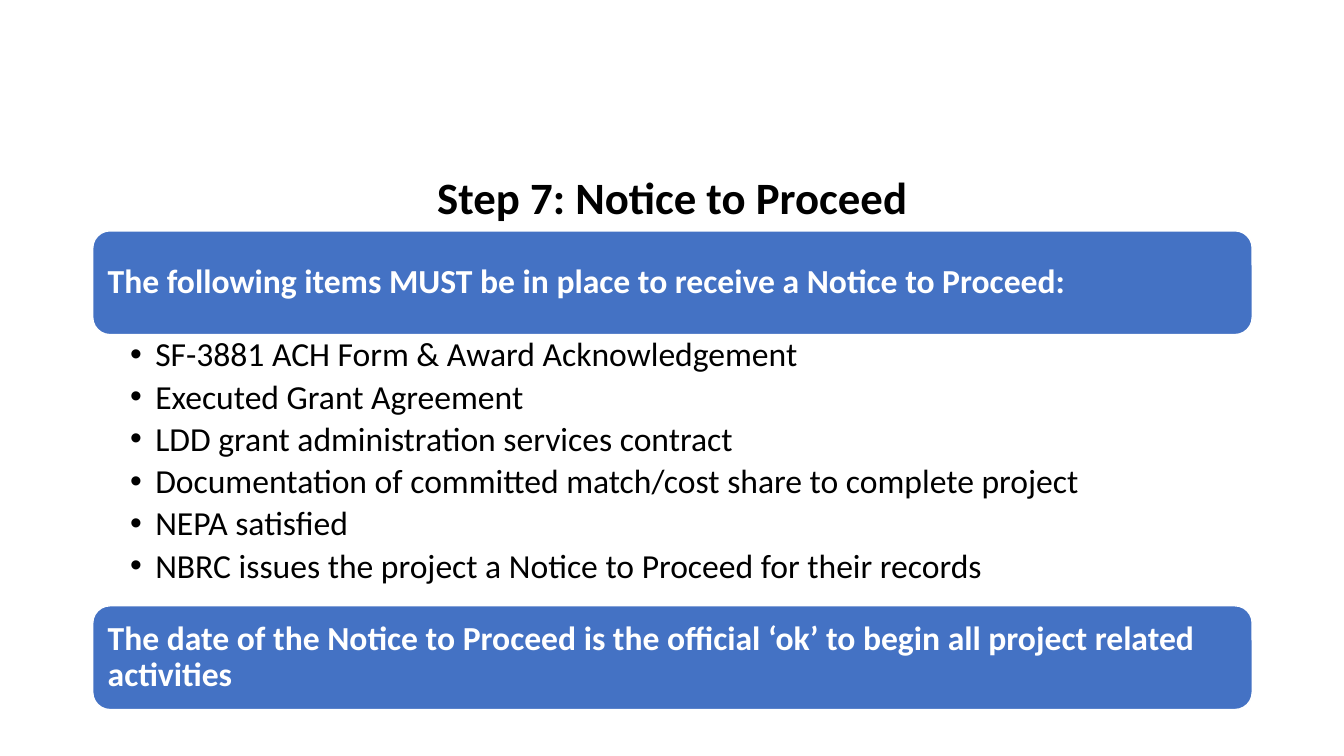
from lxml.etree import SubElement
from pptx import Presentation
from pptx.dml.color import RGBColor
from pptx.enum.shapes import MSO_SHAPE
from pptx.enum.text import MSO_ANCHOR, MSO_AUTO_SIZE, PP_ALIGN
from pptx.oxml.ns import qn
from pptx.util import Inches, Pt

COLORS = {"panel": "4472C4", "white": "FFFFFF", "black": "000000"}
LEFT, WIDTH = Inches(0.92), Inches(11.5)
PANEL_HEIGHT = Inches(1.03)
PANELS = [
    (2.29, "The following items MUST be in place to receive a Notice to Proceed:"),
    (6.01, "The date of the Notice to Proceed is the official ‘ok’ to begin all project related activities"),
]
REQUIREMENTS = [
    "SF-3881 ACH Form & Award Acknowledgement",
    "Executed Grant Agreement",
    "LDD grant administration services contract",
    "Documentation of committed match/cost share to complete project",
    "NEPA satisfied",
    "NBRC issues the project a Notice to Proceed for their records",
]


def style_paragraph(para, size, color, bold, align=PP_ALIGN.LEFT):
    para.alignment = align
    para.line_spacing = 0.9
    para.space_before = Pt(0)
    para.font.name = "Calibri"
    para.font.size = Pt(size)
    para.font.bold = bold
    para.font.color.rgb = RGBColor.from_string(COLORS[color])


def set_frame(frame, anchor, left, top, right, bottom):
    frame.word_wrap = True
    frame.auto_size = MSO_AUTO_SIZE.NONE
    frame.vertical_anchor = anchor
    frame.margin_left, frame.margin_top = Inches(left), Inches(top)
    frame.margin_right, frame.margin_bottom = Inches(right), Inches(bottom)


deck = Presentation()
deck.slide_width, deck.slide_height = Inches(13.33), Inches(7.5)
page = deck.slides.add_slide(deck.slide_layouts[1])

title = page.shapes.title
title.left, title.top, title.width, title.height = LEFT, Inches(1.67), WIDTH, Inches(0.62)
title.text_frame.text = "Step 7: Notice to Proceed"
set_frame(title.text_frame, MSO_ANCHOR.MIDDLE, 0.1, 0.05, 0.1, 0.05)
style_paragraph(title.text_frame.paragraphs[0], 32, "black", True, PP_ALIGN.CENTER)

body = page.placeholders[1]
body.left, body.top, body.width, body.height = LEFT, Inches(3.32), WIDTH, Inches(2.64)
body.text_frame.text = "\n".join(REQUIREMENTS)
set_frame(body.text_frame, MSO_ANCHOR.TOP, 0.37, 0.03, 0.19, 0.03)
for para in body.text_frame.paragraphs:
    para.level = 1
    properties = para._p.get_or_add_pPr()
    properties.set("marL", str(Inches(0.25)))
    properties.set("indent", str(-Inches(0.25)))
    SubElement(properties, qn("a:buFont")).set("typeface", "Arial")
    SubElement(properties, qn("a:buChar")).set("char", "•")
    style_paragraph(para, 24, "black", False)
    para.space_after = Pt(4.3)

for top, message in PANELS:
    panel = page.shapes.add_shape(MSO_SHAPE.ROUNDED_RECTANGLE, LEFT, Inches(top), WIDTH, PANEL_HEIGHT)
    panel.shadow.inherit = False
    panel.fill.solid()
    panel.fill.fore_color.rgb = RGBColor.from_string(COLORS["panel"])
    panel.line.color.rgb = RGBColor.from_string(COLORS["white"])
    panel.line.width = Pt(1)
    panel.text_frame.text = message
    set_frame(panel.text_frame, MSO_ANCHOR.MIDDLE, 0.1, 0.1, 0.1, 0.1)
    style_paragraph(panel.text_frame.paragraphs[0], 24, "white", True)

deck.save("out.pptx")
